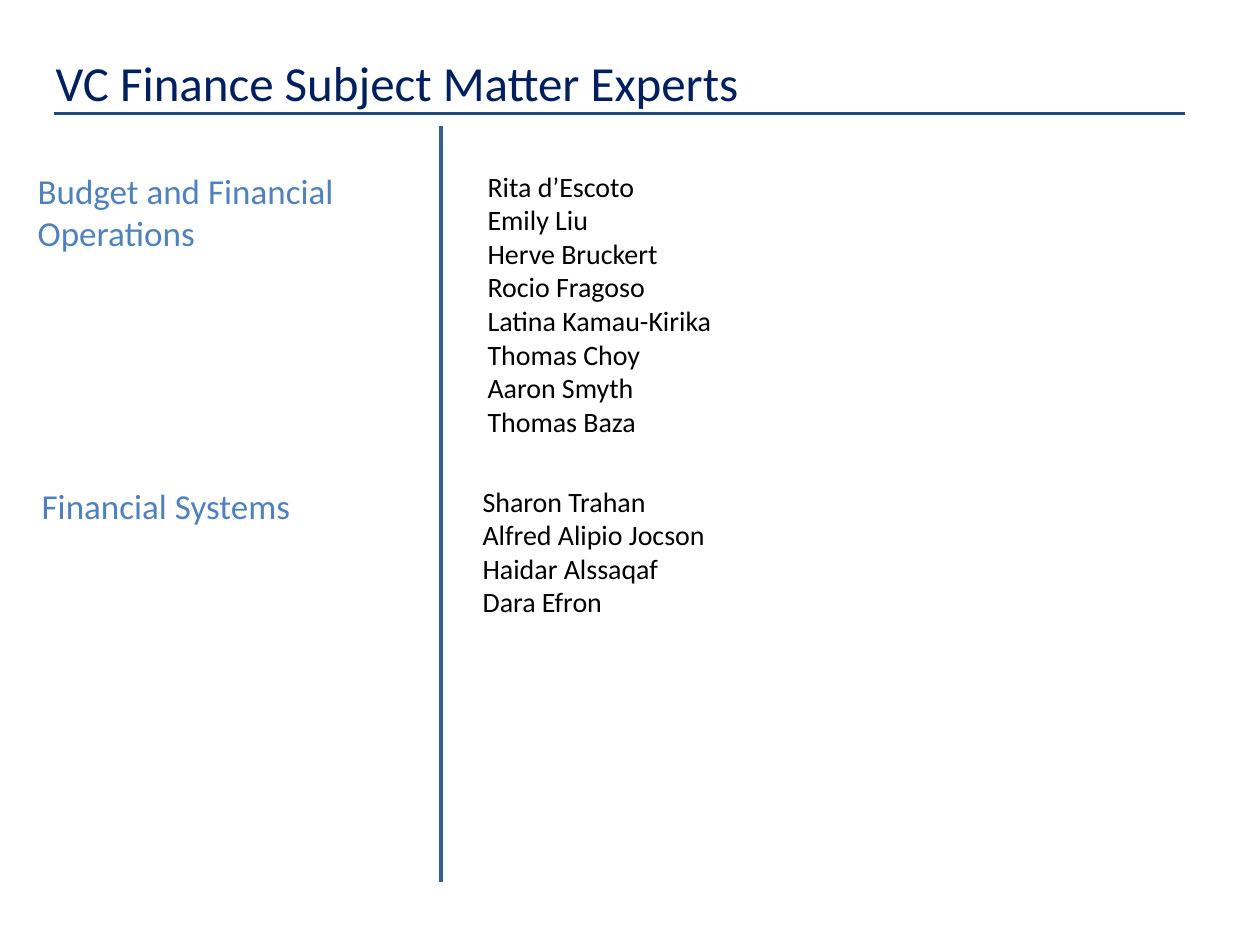
"""Build the slide listing finance subject matter experts by team."""
from dataclasses import dataclass

from lxml.etree import SubElement
from pptx import Presentation
from pptx.dml.color import RGBColor
from pptx.enum.shapes import MSO_CONNECTOR
from pptx.enum.text import MSO_ANCHOR, MSO_AUTO_SIZE, PP_ALIGN
from pptx.oxml.ns import qn
from pptx.util import Cm, Pt


@dataclass(frozen=True)
class Box:
    left: float
    top: float
    width: float
    height: float


@dataclass(frozen=True)
class Team:
    heading: str
    heading_box: Box
    members: tuple[str, ...]
    members_box: Box


@dataclass(frozen=True)
class Rule:
    start: tuple[float, float]
    end: tuple[float, float]
    color: str


TITLE_BOX = Box(1.12, 1.02, 17.58, 1.24)
TEAMS = (
    Team(
        "Budget and Financial Operations",
        Box(0.76, 3.38, 7.19, 2.67),
        ("Rita d’Escoto", "Emily Liu", "Herve Bruckert", "Rocio Fragoso",
         "Latina Kamau-Kirika", "Thomas Choy", "Aaron Smyth", "Thomas Baza"),
        Box(9.83, 3.38, 14.15, 6.22),
    ),
    Team(
        "Financial Systems",
        Box(0.84, 9.73, 7.19, 1.83),
        ("Sharon Trahan", "Alfred Alipio Jocson", "Haidar Alssaqaf", "Dara Efron"),
        Box(9.73, 9.73, 14.15, 2.77),
    ),
)
RULES = (
    Rule((1.09, 2.29), (23.88, 2.29), "1F497D"),
    Rule((8.89, 2.54), (8.89, 17.78), "376092"),
)


def rgb(color: str) -> RGBColor:
    """Turn a hex string into a colour."""
    return RGBColor.from_string(color)


def write_text(shape, *lines: str, size: float, color: str,
               before: float = 0, after: float = 0) -> None:
    """Fill a shape with one formatted paragraph per line."""
    frame = shape.text_frame
    frame.word_wrap = True
    frame.auto_size = MSO_AUTO_SIZE.SHAPE_TO_FIT_TEXT
    frame.vertical_anchor = MSO_ANCHOR.TOP
    frame.margin_left = frame.margin_right = frame.margin_bottom = 0
    frame.margin_top = Cm(0.03)
    frame.text = "\n".join(lines)
    for paragraph in frame.paragraphs:
        paragraph.alignment = PP_ALIGN.LEFT
        paragraph.space_before = Pt(before)
        paragraph.space_after = Pt(after)
        font = paragraph.runs[0].font
        font.name = "Calibri"
        font.size = Pt(size)
        font.color.rgb = rgb(color)


def add_text_box(slide, box: Box):
    """Add an empty text box at the given place."""
    return slide.shapes.add_textbox(
        Cm(box.left), Cm(box.top), Cm(box.width), Cm(box.height))


def add_title(slide, text: str, box: Box) -> None:
    """Place and format the title placeholder."""
    title = slide.shapes.title
    title.left, title.top = Cm(box.left), Cm(box.top)
    title.width, title.height = Cm(box.width), Cm(box.height)
    write_text(title, text, size=28, color="001F5F", before=1)


def add_team(slide, team: Team) -> None:
    """Add a team heading and its list of members."""
    write_text(add_text_box(slide, team.heading_box), team.heading,
               size=20, color="4F81BD", after=6)
    write_text(add_text_box(slide, team.members_box), *team.members,
               size=16, color="000000")


def add_rule(slide, rule: Rule) -> None:
    """Add a straight separator line without a shadow."""
    connector = slide.shapes.add_connector(
        MSO_CONNECTOR.STRAIGHT, *map(Cm, rule.start + rule.end))
    connector.line.color.rgb = rgb(rule.color)
    connector.line.width = Pt(1.75)
    SubElement(connector._element.spPr, qn("a:effectLst"))


def main() -> None:
    """Create and save the presentation."""
    presentation = Presentation()
    presentation.slide_width = Cm(25.4)
    presentation.slide_height = Cm(19.05)
    slide = presentation.slides.add_slide(presentation.slide_layouts[5])
    add_title(slide, "VC Finance Subject Matter Experts", TITLE_BOX)
    for rule in RULES:
        add_rule(slide, rule)
    for team in TEAMS:
        add_team(slide, team)
    presentation.save("out.pptx")


if __name__ == "__main__":
    main()
